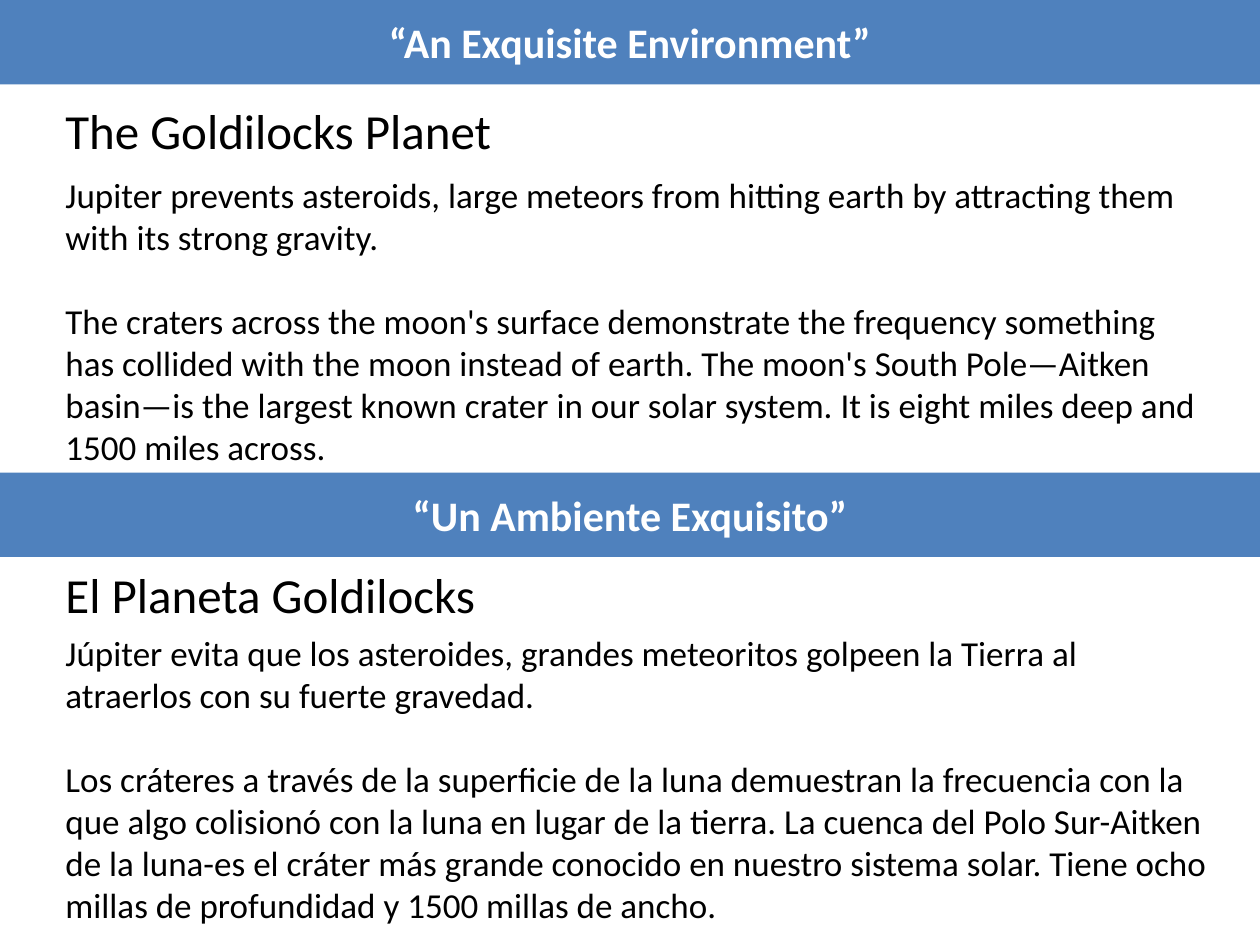
from pptx import Presentation
from pptx.dml.color import RGBColor
from pptx.enum.shapes import MSO_SHAPE
from pptx.enum.text import MSO_ANCHOR, MSO_AUTO_SIZE, PP_ALIGN
from pptx.util import Cm, Pt

BLUE = RGBColor(0x4F, 0x81, 0xBD)
WHITE = RGBColor(0xFF, 0xFF, 0xFF)
BLACK = RGBColor(0, 0, 0)

WIDTH, HEIGHT = Cm(25.4), Cm(19.05)
LEFT = Cm(1.07)

ENGLISH = [
    "Jupiter prevents asteroids, large meteors from hitting earth by "
    "attracting them with its strong gravity.",
    "The craters across the moon's surface demonstrate the frequency "
    "something has collided with the moon instead of earth. The moon's "
    "South Pole—Aitken basin—is the largest known crater in our solar "
    "system. It is eight miles deep and 1500 miles across.",
]
SPANISH = [
    "Júpiter evita que los asteroides, grandes meteoritos golpeen la "
    "Tierra al atraerlos con su fuerte gravedad.",
    "Los cráteres a través de la superficie de la luna demuestran la "
    "frecuencia con la que algo colisionó con la luna en lugar de la "
    "tierra. La cuenca del Polo Sur-Aitken de la luna-es el cráter más "
    "grande conocido en nuestro sistema solar. Tiene ocho millas de "
    "profundidad y 1500 millas de ancho.",
]


def write(shape, *texts, size, color=BLACK, bold=False,
          align=PP_ALIGN.LEFT, anchor=MSO_ANCHOR.TOP, gap=0):
    """Fill a shape with one paragraph per text, gap points apart."""
    frame = shape.text_frame
    frame.word_wrap = True
    frame.auto_size = MSO_AUTO_SIZE.NONE
    frame.vertical_anchor = anchor
    for i, text in enumerate(texts):
        para = frame.add_paragraph() if i else frame.paragraphs[0]
        para.alignment = align
        para.space_before = Pt(gap if i else 0)
        run = para.add_run()
        run.text = text
        font = run.font
        font.name, font.size, font.bold = "Calibri", Pt(size), bold
        font.color.rgb = color


def style_bar(shape, text):
    shape.fill.solid()
    shape.fill.fore_color.rgb = BLUE
    shape.line.fill.background()
    write(shape, text, size=24, color=WHITE, bold=True,
          align=PP_ALIGN.CENTER, anchor=MSO_ANCHOR.MIDDLE)


def add_title(slide, text):
    title = slide.shapes.title
    title.left, title.top = Cm(0), Cm(0)
    title.width, title.height = WIDTH, Cm(1.7)
    style_bar(title, text)


def add_bar(slide, top, text):
    bar = slide.shapes.add_shape(MSO_SHAPE.RECTANGLE, 0, top, WIDTH, Cm(1.7))
    bar.shadow.inherit = False
    style_bar(bar, text)


def add_heading(slide, top, text):
    box = slide.shapes.add_textbox(LEFT, top, Cm(17.15), Cm(1.45))
    write(box, text, size=28)


def add_body(slide, top, texts):
    box = slide.shapes.add_textbox(LEFT, top, Cm(23.52), Cm(6.25))
    write(box, *texts, size=20, gap=24)


def main():
    deck = Presentation()
    deck.slide_width, deck.slide_height = WIDTH, HEIGHT
    slide = deck.slides.add_slide(deck.slide_layouts[5])

    add_title(slide, "“An Exquisite Environment”")
    add_heading(slide, Cm(1.9), "The Goldilocks Planet")
    add_body(slide, Cm(3.38), ENGLISH)

    add_bar(slide, Cm(9.53), "“Un Ambiente Exquisito”")
    add_heading(slide, Cm(11.25), "El Planeta Goldilocks")
    add_body(slide, Cm(12.6), SPANISH)

    deck.save("out.pptx")


if __name__ == "__main__":
    main()
